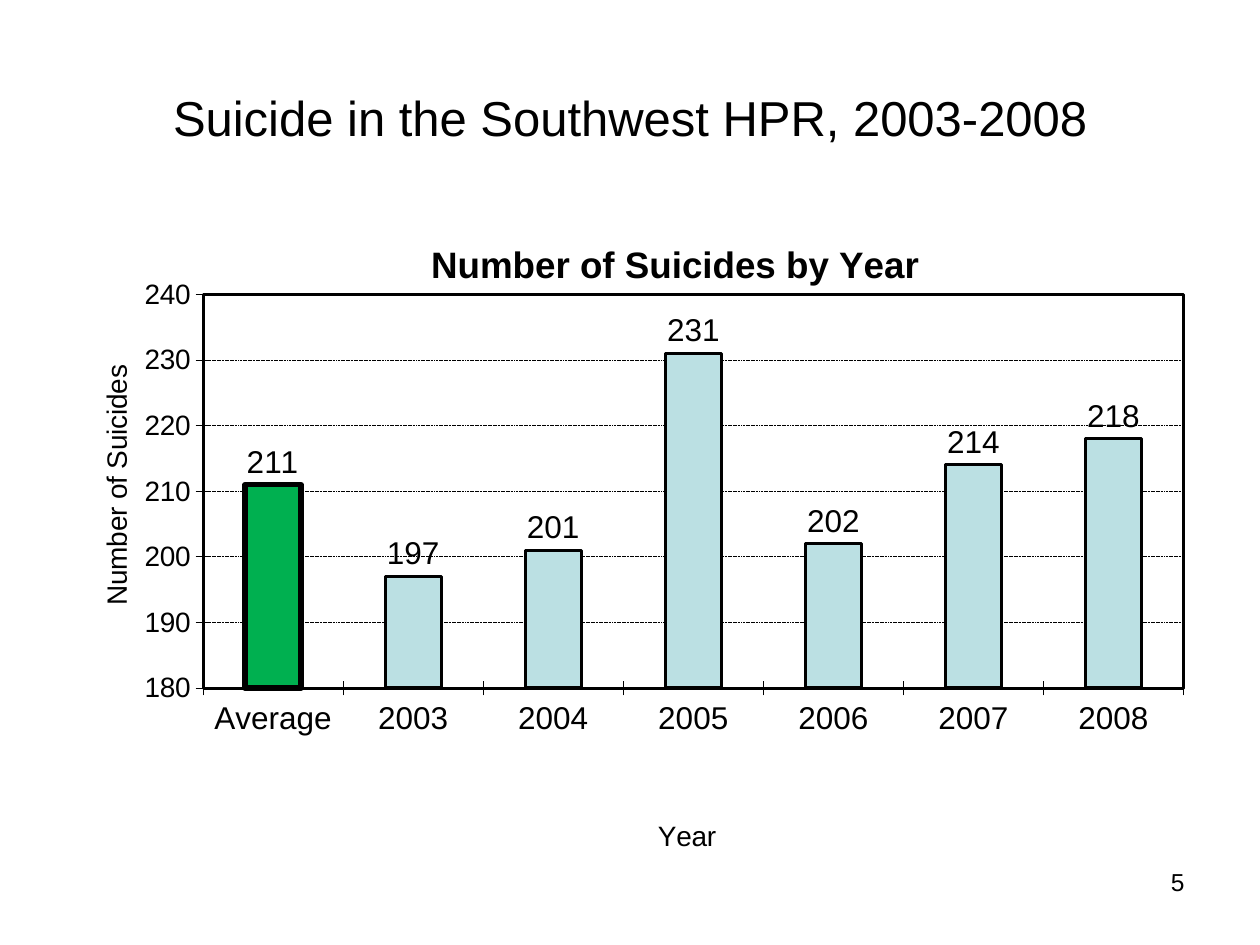
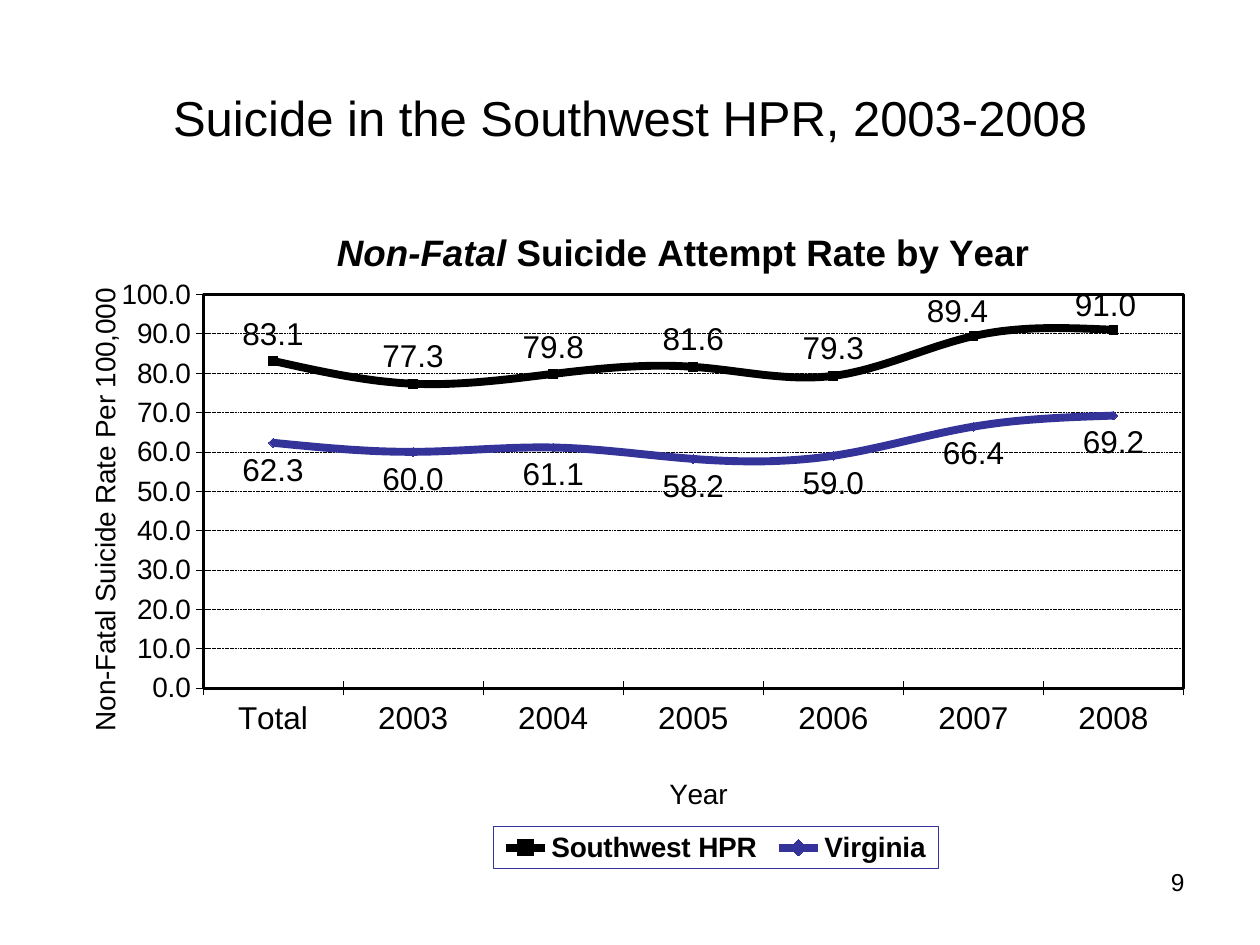
"""Build two chart slides on suicide in the Southwest HPR, 2003-2008."""
import pptx
import pptx.chart.data
import pptx.dml.color
import pptx.enum.chart
import pptx.enum.dml
import pptx.enum.text
import pptx.oxml
import pptx.util

Inches = pptx.util.Inches
Pt = pptx.util.Pt
charts = pptx.enum.chart
BLACK, PALE, GREEN, BLUE = "000000", "BBE0E3", "00B050", "333399"
FONT = "Arial"
NAMESPACES = (
    'xmlns:c="http://schemas.openxmlformats.org/drawingml/2006/chart" '
    'xmlns:a="http://schemas.openxmlformats.org/drawingml/2006/main"'
)
YEARS = ["2003", "2004", "2005", "2006", "2007", "2008"]


def style(target, size=None, color=BLACK, bold=False):
    """Style a font, or a line when the target has a width."""
    if hasattr(target, "width"):
        target.width = Pt(size)
        target.color.rgb = pptx.dml.color.RGBColor.from_string(color)
    else:
        target.name, target.size, target.bold = FONT, Pt(size), bold
        target.color.rgb = pptx.dml.color.RGBColor.from_string(color)


def place(element, index, **values):
    """Put a manual layout at the given child index of a chart element."""
    for old in element.xpath("c:layout"):
        element.remove(old)
    settings = "".join(f'<c:{name} val="{value}"/>' for name, value in values.items())
    element.insert(index, pptx.oxml.parse_xml(
        f"<c:layout {NAMESPACES}><c:manualLayout>{settings}</c:manualLayout></c:layout>"))


slide_plans = [
    {
        "number": "5",
        "kind": charts.XL_CHART_TYPE.COLUMN_CLUSTERED,
        "title": [("Number of Suicides by Year", False)],
        "title_at": (0.32, 0.04),
        "year_at": (0.52, 0.87),
        "value_title": "Number of Suicides",
        "value_at": (0.03, 0.22),
        "range": (180, 240),
        "format": "0",
        "categories": ["Average"] + YEARS,
        "series": [("Series 1", [211, 197, 201, 231, 202, 214, 218], PALE,
                    charts.XL_LABEL_POSITION.OUTSIDE_END)],
    },
    {
        "number": "9",
        "kind": charts.XL_CHART_TYPE.LINE_MARKERS,
        "title": [("Non-Fatal", True), (" Suicide Attempt Rate by Year", False)],
        "title_at": (0.24, 0.03),
        "year_at": (0.53, 0.81),
        "value_title": "Non-Fatal Suicide Rate Per 100,000",
        "value_at": (0.02, 0.11),
        "range": (0, 100),
        "format": "0.0",
        "categories": ["Total"] + YEARS,
        "series": [
            ("Southwest HPR", [83.1, 77.3, 79.8, 81.6, 79.3, 89.4, 91.0], BLACK,
             charts.XL_LABEL_POSITION.ABOVE),
            ("Virginia", [62.3, 60.0, 61.1, 58.2, 59.0, 66.4, 69.2], BLUE,
             charts.XL_LABEL_POSITION.BELOW),
        ],
    },
]

presentation = pptx.Presentation()
presentation.slide_width, presentation.slide_height = Inches(10), Inches(7.5)

for plan in slide_plans:
    slide = presentation.slides.add_slide(presentation.slide_layouts[5])

    number_box = slide.shapes.add_textbox(Inches(7.17), Inches(6.83), Inches(2.33), Inches(0.52))
    number_box.text_frame.word_wrap = True
    paragraph = number_box.text_frame.paragraphs[0]
    paragraph.alignment = pptx.enum.text.PP_ALIGN.RIGHT
    run = paragraph.add_run()
    run.text = plan["number"]
    style(run.font, 14)

    title = slide.shapes.title
    title.left, title.top = Inches(0.5), Inches(0.3)
    title.width, title.height = Inches(9), Inches(1.25)
    title.text_frame.vertical_anchor = pptx.enum.text.MSO_ANCHOR.MIDDLE
    paragraph = title.text_frame.paragraphs[0]
    paragraph.alignment = pptx.enum.text.PP_ALIGN.CENTER
    run = paragraph.add_run()
    run.text = "Suicide in the Southwest HPR, 2003-2008"
    style(run.font, 28)

    data = pptx.chart.data.CategoryChartData(number_format=plan["format"])
    data.categories = plan["categories"]
    for name, values, color, position in plan["series"]:
        data.add_series(name, values)
    chart = slide.shapes.add_chart(
        plan["kind"], Inches(0.47), Inches(1.64), Inches(9.06), Inches(5.53), data).chart
    style(chart.font, 24, bold=True)
    chart.font.name = "Montserrat"

    chart.has_title = True
    for text, italic in plan["title"]:
        run = chart.chart_title.text_frame.paragraphs[0].add_run()
        run.text = text
        style(run.font, 21, bold=True)
        run.font.italic = italic
    x, y = plan["title_at"]
    place(chart.chart_title._element, 1, xMode="edge", yMode="edge", x=x, y=y)

    plot_area = chart._chartSpace.chart.plotArea
    place(plot_area, 0, layoutTarget="inner", xMode="edge", yMode="edge",
          x=0.126, y=0.126, w=0.859, h=0.565)
    plot_area.append(pptx.oxml.parse_xml(
        f'<c:spPr {NAMESPACES}><a:noFill/><a:ln w="{Pt(1.75)}"><a:solidFill>'
        f'<a:srgbClr val="{BLACK}"/></a:solidFill></a:ln></c:spPr>'))

    value_axis = chart.value_axis
    axes = [
        (chart.category_axis, "Year", plan["year_at"], 18),
        (value_axis, plan["value_title"], plan["value_at"], 16),
    ]
    for axis, text, (x, y), size in axes:
        axis.major_tick_mark = charts.XL_TICK_MARK.CROSS
        style(axis.tick_labels.font, size)
        style(axis.format.line, 0.38)
        frame = axis.axis_title.text_frame
        run = frame.paragraphs[0].add_run()
        run.text = text
        style(run.font, 16)
        place(axis.axis_title._element, 1, xMode="edge", yMode="edge", x=x, y=y)
    value_title_body = value_axis.axis_title._element.xpath("c:tx/c:rich/a:bodyPr")[0]
    value_title_body.set("rot", "-5400000")
    value_title_body.set("vert", "horz")
    value_axis.minimum_scale, value_axis.maximum_scale = plan["range"]
    value_axis.major_unit = 10
    value_axis.tick_labels.number_format = plan["format"]
    value_axis.tick_labels.number_format_is_linked = False
    value_axis.has_major_gridlines = True
    gridline = value_axis.major_gridlines.format.line
    style(gridline, 0.38)
    gridline.dash_style = pptx.enum.dml.MSO_LINE.SQUARE_DOT

    plot = chart.plots[0]
    plot.vary_by_categories = False
    is_column = plan["kind"] == charts.XL_CHART_TYPE.COLUMN_CLUSTERED
    for series, (name, values, color, position) in zip(plot.series, plan["series"]):
        labels = series.data_labels
        labels.show_value = True
        labels.number_format = plan["format"]
        labels.number_format_is_linked = False
        labels.position = position
        style(labels.font, 18)
        fills = [series.format.fill]
        if is_column:
            style(series.format.line, 1.75)
        else:
            series.smooth = True
            style(series.format.line, 4.5, color)
            series.marker.style = charts.XL_MARKER_STYLE.AUTOMATIC
            series.marker.size = 5
            style(series.marker.format.line, 0.75, color)
            fills = [series.marker.format.fill]
        for fill in fills:
            fill.solid()
            fill.fore_color.rgb = pptx.dml.color.RGBColor.from_string(color)

    chart.has_legend = not is_column
    if is_column:
        plot.gap_width = 150
        average = plot.series[0].points[0].format
        average.fill.solid()
        average.fill.fore_color.rgb = pptx.dml.color.RGBColor.from_string(GREEN)
        style(average.line, 3)
    else:
        southwest = plot.series[0]
        for index, shift in ((5, -0.014), (6, -0.007)):
            label = southwest.points[index].data_label
            label.position = charts.XL_LABEL_POSITION.ABOVE
            style(label.font, 18)
            element = southwest._element.xpath(f"c:dLbls/c:dLbl[c:idx/@val='{index}']")[0]
            place(element, 1, x=shift, y=0.003)
        legend = chart.legend
        legend.position = charts.XL_LEGEND_POSITION.BOTTOM
        legend.include_in_layout = False
        place(legend._element, 1, xMode="edge", yMode="edge", x=0.38, y=0.89, w=0.39, h=0.06)
        legend._element.append(pptx.oxml.parse_xml(
            f'<c:spPr {NAMESPACES}><a:noFill/><a:ln w="{Pt(0.38)}"><a:solidFill>'
            f'<a:srgbClr val="{BLUE}"/></a:solidFill></a:ln></c:spPr>'))
        style(legend.font, 16, bold=True)

presentation.save("out.pptx")
